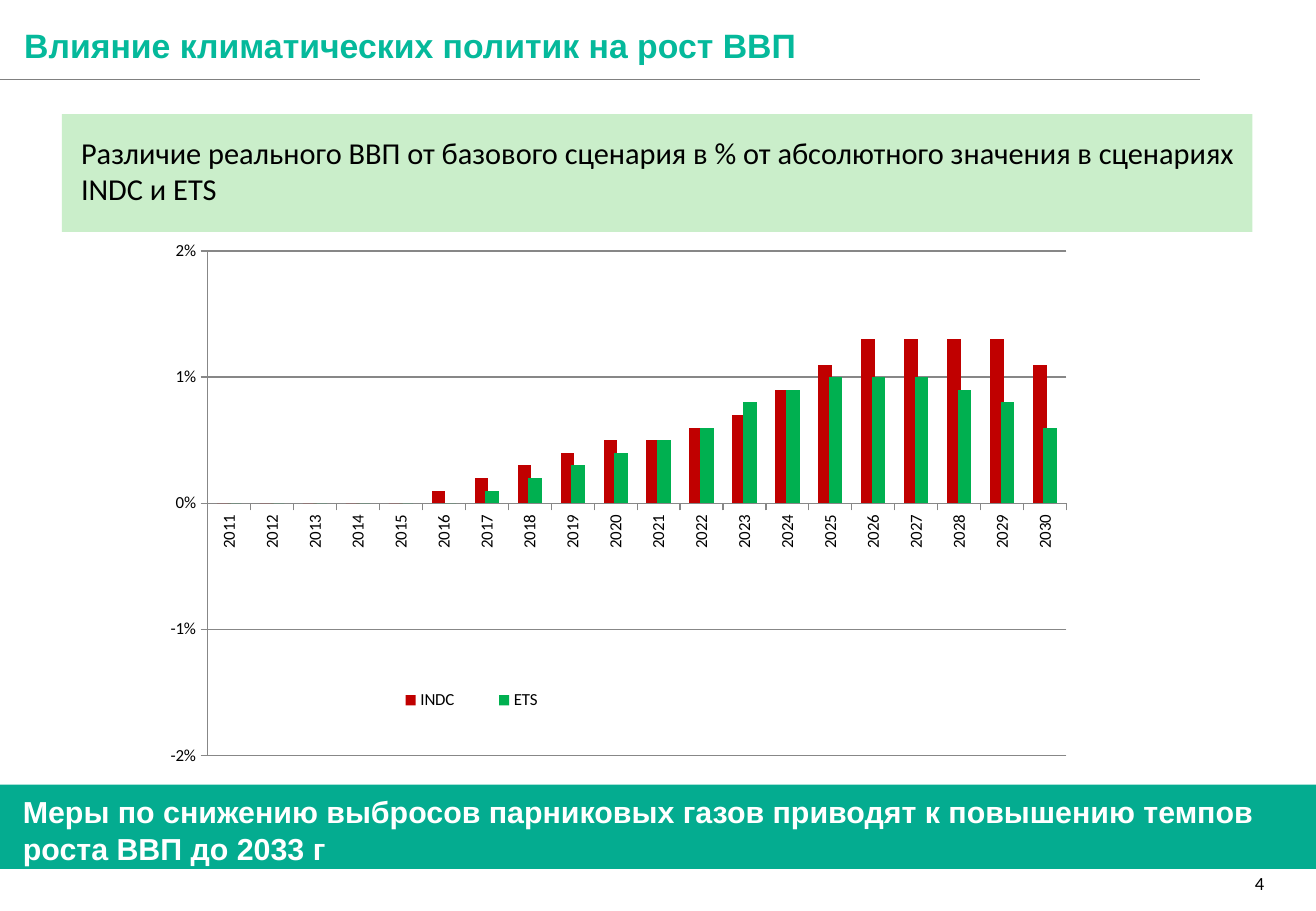
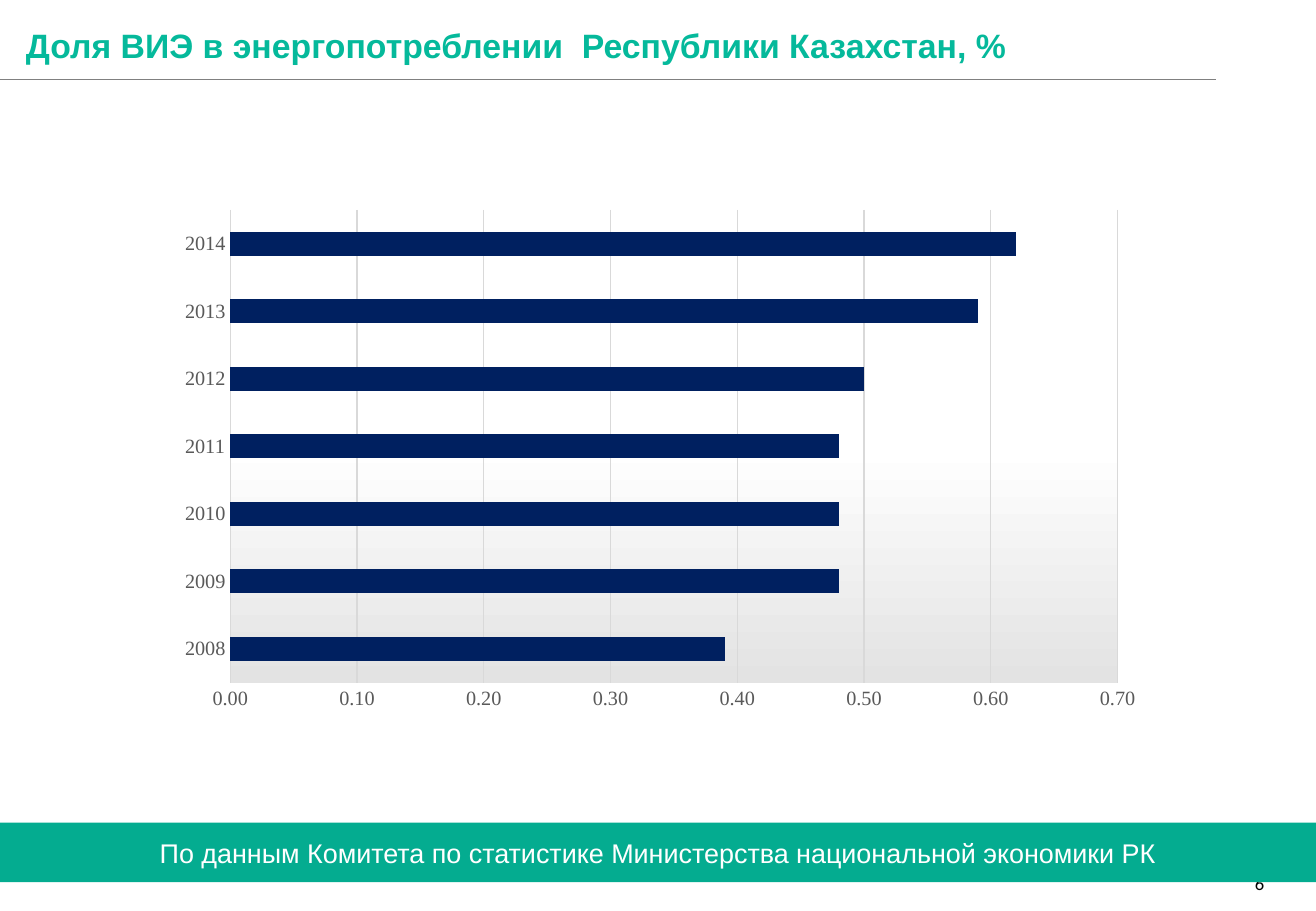
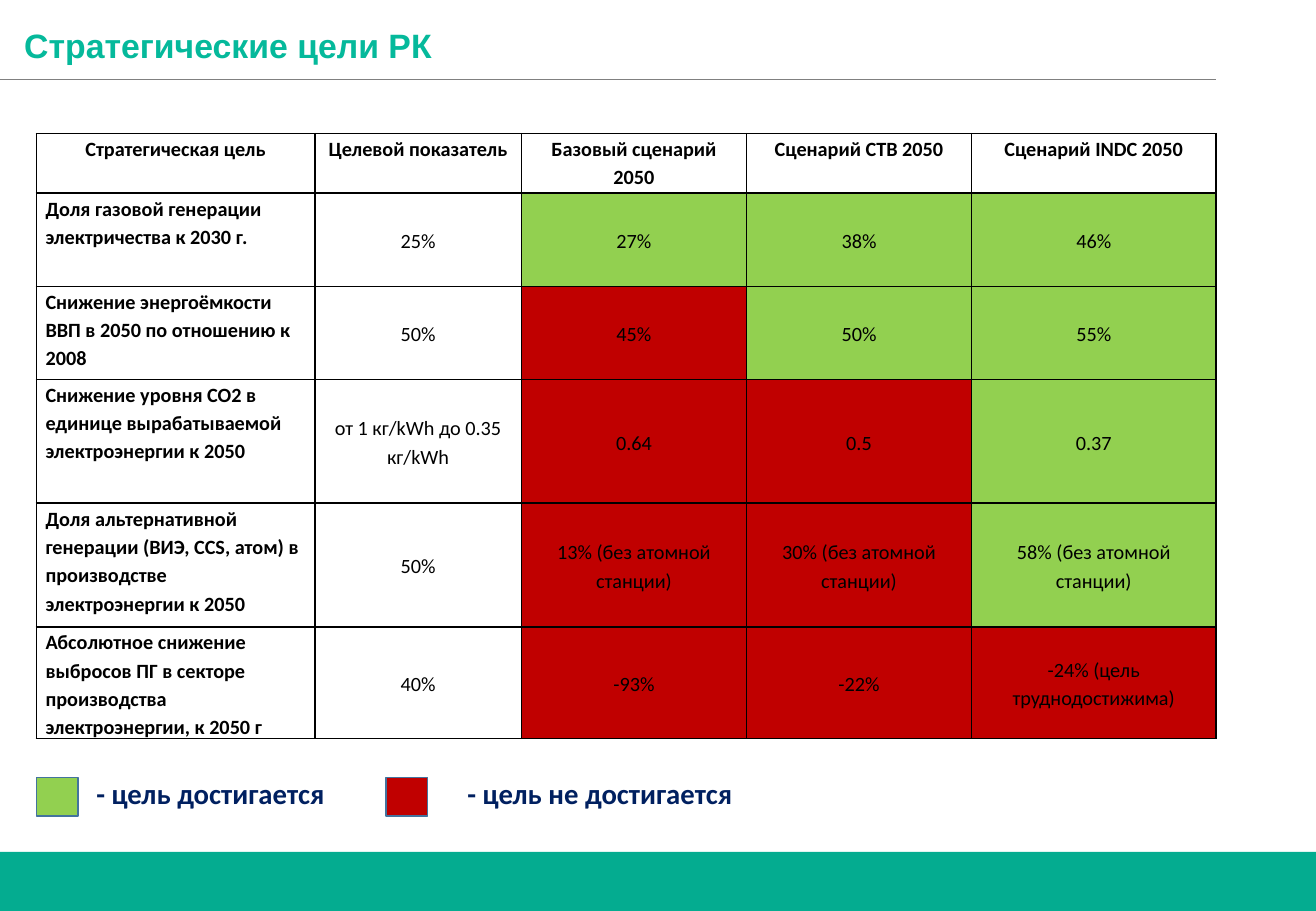
from dataclasses import dataclass

from lxml.etree import SubElement
from pptx import Presentation
from pptx.chart.chart import Chart
from pptx.chart.data import CategoryChartData
from pptx.dml.color import RGBColor
from pptx.enum.chart import XL_CHART_TYPE, XL_LEGEND_POSITION, XL_TICK_MARK
from pptx.enum.shapes import MSO_CONNECTOR, MSO_SHAPE
from pptx.enum.text import MSO_ANCHOR, MSO_AUTO_SIZE, PP_ALIGN
from pptx.oxml import parse_xml
from pptx.oxml.ns import nsdecls, qn
from pptx.presentation import Presentation as Deck
from pptx.shapes.autoshape import Shape
from pptx.slide import Slide
from pptx.table import _Cell as Cell
from pptx.text.text import Font, TextFrame
from pptx.util import Pt


@dataclass(frozen=True)
class Theme:
    title: str = "05B99B"
    band: str = "04AC90"
    rule: str = "808080"
    note: str = "CAEECA"
    white: str = "FFFFFF"
    black: str = "000000"
    navy: str = "002060"
    reached: str = "92D050"
    missed: str = "C00000"
    emissions: str = "00B050"
    swatch_line: str = "43739E"
    grid: str = "D9D9D9"
    axis_text: str = "595959"
    shade: str = "E3E3E3"
    heading_font: str = "Arial"
    body_font: str = "Calibri"
    chart_font: str = "Times New Roman"
    title_size: float = 20
    large_size: float = 18
    legend_size: float = 17
    source_size: float = 16
    table_size: float = 12
    number_size: float = 11
    small_size: float = 10


THEME = Theme()
SLIDE_WIDTH, SLIDE_HEIGHT = 780, 540


@dataclass(frozen=True)
class Box:
    left: float
    top: float
    width: float
    height: float

    def lengths(self) -> tuple[Pt, Pt, Pt, Pt]:
        return Pt(self.left), Pt(self.top), Pt(self.width), Pt(self.height)


@dataclass(frozen=True)
class Style:
    font: str
    size: float
    color: str
    bold: bool = False


@dataclass(frozen=True)
class Series:
    name: str
    values: tuple[float, ...]
    color: str


@dataclass(frozen=True)
class Result:
    text: str
    reached: bool


@dataclass(frozen=True)
class Goal:
    name: str
    target: str
    results: tuple[Result, Result, Result]


@dataclass(frozen=True)
class LegendItem:
    swatch_left: float
    text_left: float
    text: str
    color: str


TITLE = Style(THEME.heading_font, THEME.title_size, THEME.title, True)
NUMBER = Style(THEME.body_font, THEME.number_size, THEME.black)
NOTE = Style(THEME.body_font, THEME.large_size, THEME.black)
CONCLUSION = Style(THEME.heading_font, THEME.large_size, THEME.white, True)
SOURCE = Style(THEME.heading_font, THEME.source_size, THEME.white)
CELL = Style(THEME.body_font, THEME.table_size, THEME.black)
CELL_BOLD = Style(THEME.body_font, THEME.table_size, THEME.black, True)
LEGEND = Style(THEME.body_font, THEME.legend_size, THEME.navy, True)
CHART_TEXT = Style(THEME.body_font, THEME.small_size, THEME.black)
AXIS_TEXT = Style(THEME.chart_font, THEME.table_size, THEME.axis_text)

GROWTH = (
    Series("INDC", (0, 0, 0, 0, 0, 0.001, 0.002, 0.003, 0.004, 0.005,
                    0.005, 0.006, 0.007, 0.009, 0.011, 0.013, 0.013,
                    0.013, 0.013, 0.011), THEME.missed),
    Series("ETS", (0, 0, 0, 0, 0, 0, 0.001, 0.002, 0.003, 0.004,
                   0.005, 0.006, 0.008, 0.009, 0.01, 0.01, 0.01,
                   0.009, 0.008, 0.006), THEME.emissions),
)
RENEWABLES = (
    Series("Series 1", (0.39, 0.48, 0.48, 0.48, 0.5, 0.59, 0.62), THEME.navy),
)

HEADERS = ("Стратегическая цель", "Целевой показатель", "Базовый сценарий 2050",
           "Сценарий СТВ 2050", "Сценарий INDC 2050")
GOALS = (
    Goal("Доля газовой генерации электричества к 2030 г.", "25%",
         (Result("27%", True), Result("38%", True), Result("46%", True))),
    Goal("Снижение энергоёмкости ВВП в 2050 по отношению к 2008", "50%",
         (Result("45%", False), Result("50%", True), Result("55%", True))),
    Goal("Снижение уровня CO2 в единице вырабатываемой электроэнергии к 2050",
         "от 1 кг/kWh до 0.35 кг/kWh",
         (Result("0.64", False), Result("0.5", False), Result("0.37", True))),
    Goal("Доля альтернативной генерации (ВИЭ, CCS, атом) в производстве "
         "электроэнергии к 2050", "50%",
         (Result("13% (без атомной станции)", False),
          Result("30% (без атомной станции)", False),
          Result("58% (без атомной станции)", True))),
    Goal("Абсолютное снижение выбросов ПГ в секторе производства "
         "электроэнергии, к 2050 г", "40%",
         (Result("-93%", False), Result("-22%", False),
          Result("-24% (цель труднодостижима)", False))),
)
COLUMN_WIDTHS = (165, 122.5, 133.4, 133.4, 144.9)
ROW_HEIGHTS = (35.3, 55.2, 55.2, 73.4, 73.4, 64.5)
LEGEND_ITEMS = (
    LegendItem(21.6, 50, "- цель достигается", THEME.reached),
    LegendItem(229, 270, "- цель не достигается", THEME.missed),
)


# Text and shapes
def style_font(font: Font, style: Style) -> None:
    font.name = style.font
    font.size = Pt(style.size)
    font.bold = style.bold
    font.color.rgb = RGBColor.from_string(style.color)


def write(frame: TextFrame, lines: tuple[str, ...], style: Style,
          align: PP_ALIGN = PP_ALIGN.LEFT, spacing: float = 1.0) -> None:
    for index, line in enumerate(lines):
        paragraph = frame.add_paragraph() if index else frame.paragraphs[0]
        paragraph.alignment = align
        paragraph.line_spacing = spacing
        run = paragraph.add_run()
        run.text = line
        style_font(run.font, style)


def add_text(slide: Slide, box: Box, lines: tuple[str, ...], style: Style,
             wrap: bool = True, spacing: float = 1.0) -> TextFrame:
    frame = slide.shapes.add_textbox(*box.lengths()).text_frame
    frame.word_wrap = wrap
    write(frame, lines, style, spacing=spacing)
    return frame


def clear_margins(frame: TextFrame) -> None:
    frame.margin_left = frame.margin_right = Pt(0)
    frame.margin_top = frame.margin_bottom = Pt(0)


def add_rectangle(slide: Slide, box: Box, color: str, line: str = "") -> Shape:
    shape = slide.shapes.add_shape(MSO_SHAPE.RECTANGLE, *box.lengths())
    shape.shadow.inherit = False
    shape.fill.solid()
    shape.fill.fore_color.rgb = RGBColor.from_string(color)
    if line:
        shape.line.color.rgb = RGBColor.from_string(line)
        shape.line.width = Pt(1)
    else:
        shape.line.fill.background()
    return shape


# Parts shared by the slides
def add_base(presentation: Deck, title: str, rule_width: float = 721,
             title_left: float = 14.4, number: str = "") -> Slide:
    slide = presentation.slides.add_slide(presentation.slide_layouts[6])
    frame = add_text(slide, Box(title_left, 17.3, 720, 21.6), (title,), TITLE, spacing=0.9)
    clear_margins(frame)
    frame.vertical_anchor = MSO_ANCHOR.BOTTOM
    if number:
        clear_margins(add_text(slide, Box(743.8, 517, 17.3, 12.2), (number,), NUMBER, wrap=False))
    rule = slide.shapes.add_connector(
        MSO_CONNECTOR.STRAIGHT, Pt(0), Pt(47.2), Pt(rule_width), Pt(47.2))
    rule.line.color.rgb = RGBColor.from_string(THEME.rule)
    rule.line.width = Pt(0.5)
    SubElement(rule._element.spPr, qn("a:effectLst"))
    return slide


def add_band(slide: Slide, top: float, height: float = 35.3) -> Shape:
    return add_rectangle(slide, Box(0, top, SLIDE_WIDTH, height), THEME.band)


# Charts
def add_bars(slide: Slide, box: Box, kind: XL_CHART_TYPE, first_year: int,
             rows: tuple[Series, ...], gap: int, overlap: int, style: Style) -> Chart:
    data = CategoryChartData()
    data.categories = [str(first_year + step) for step in range(len(rows[0].values))]
    for row in rows:
        data.add_series(row.name, row.values)
    chart = slide.shapes.add_chart(kind, *box.lengths(), data).chart
    chart.has_title = False
    chart.has_legend = False
    style_font(chart.font, style)
    plot = chart.plots[0]
    plot.vary_by_categories = False
    plot.gap_width = gap
    plot.overlap = overlap
    for series, row in zip(plot.series, rows):
        series.invert_if_negative = False
        series.format.fill.solid()
        series.format.fill.fore_color.rgb = RGBColor.from_string(row.color)
    chart.value_axis.has_major_gridlines = True
    return chart


def set_layout(parent, index: int, box: Box, inner: bool = False) -> None:
    for old in parent.findall(qn("c:layout")):
        parent.remove(old)
    target = '<c:layoutTarget val="inner"/>' if inner else ""
    parent.insert(index, parse_xml(
        f'<c:layout {nsdecls("c")}><c:manualLayout>{target}'
        f'<c:xMode val="edge"/><c:yMode val="edge"/>'
        f'<c:x val="{box.left}"/><c:y val="{box.top}"/>'
        f'<c:w val="{box.width}"/><c:h val="{box.height}"/>'
        f'</c:manualLayout></c:layout>'))


def shape_properties(fill: str):
    return parse_xml(f'<c:spPr {nsdecls("c", "a")}>{fill}<a:ln><a:noFill/></a:ln></c:spPr>')


def fill_chart(chart: Chart) -> None:
    white = f'<a:solidFill><a:srgbClr val="{THEME.white}"/></a:solidFill>'
    chart._chartSpace.find(qn("c:chart")).addnext(shape_properties(white))
    stops = "".join(
        f'<a:gs pos="{percent * 1000}"><a:srgbClr val="{color}"/></a:gs>'
        for percent, color in ((0, THEME.white), (50, THEME.white), (100, THEME.shade)))
    gradient = (f'<a:gradFill><a:gsLst>{stops}</a:gsLst>'
                f'<a:lin ang="5400000" scaled="0"/></a:gradFill>')
    plot_area = chart._chartSpace.find(f'{qn("c:chart")}/{qn("c:plotArea")}')
    plot_area.append(shape_properties(gradient))


# Table cells
def fill_cell(cell: Cell, text: str, style: Style, align: PP_ALIGN,
              anchor: MSO_ANCHOR, color: str = "") -> None:
    cell.margin_left = cell.margin_right = Pt(5.4)
    cell.margin_top = cell.margin_bottom = Pt(0)
    cell.vertical_anchor = anchor
    write(cell.text_frame, (text,), style, align, 1.15)
    if color:
        cell.fill.solid()
        cell.fill.fore_color.rgb = RGBColor.from_string(color)
    else:
        cell.fill.background()
    properties = cell._tc.get_or_add_tcPr()
    for index, side in enumerate(("lnL", "lnR", "lnT", "lnB")):
        properties.insert(index, parse_xml(
            f'<a:{side} {nsdecls("a")} w="12700"><a:solidFill>'
            f'<a:srgbClr val="{THEME.black}"/></a:solidFill></a:{side}>'))


# Slides
def build_growth(presentation: Deck) -> None:
    slide = add_base(presentation, "Влияние климатических политик на рост ВВП",
                     rule_width=711.4, number="4")
    add_rectangle(slide, Box(36.7, 67.7, 705.6, 69.8), THEME.note)
    add_text(slide, Box(41, 75.8, 701.3, 69.1),
             ("Различие реального ВВП от базового сценария в % от абсолютного "
              "значения в сценариях INDC и ETS",), NOTE)
    add_band(slide, 465.1, 50)
    add_text(slide, Box(6.5, 466.8, 765.4, 51),
             ("Меры по снижению выбросов парниковых газов приводят к повышению темпов",
              "роста ВВП до 2033 г"), CONCLUSION)

    chart = add_bars(slide, Box(92.2, 137.8, 594.7, 336.2), XL_CHART_TYPE.COLUMN_CLUSTERED,
                     2011, GROWTH, 136, 23, CHART_TEXT)
    values, years = chart.value_axis, chart.category_axis
    values.minimum_scale, values.maximum_scale, values.major_unit = -0.02, 0.02, 0.01
    values.tick_labels.number_format = "0%"
    values.tick_labels.number_format_is_linked = False
    values.major_tick_mark = years.major_tick_mark = XL_TICK_MARK.OUTSIDE
    style_font(years.tick_labels.font, CHART_TEXT)
    label_body = years._element.find(f'{qn("c:txPr")}/{qn("a:bodyPr")}')
    label_body.set("rot", "-5400000")
    label_body.set("vert", "horz")
    chart.has_legend = True
    chart.legend.position = XL_LEGEND_POSITION.RIGHT
    chart.legend.include_in_layout = False
    set_layout(chart.legend._element, 1, Box(0.21, 0.8, 0.21, 0.05))
    plot_area = chart._chartSpace.find(f'{qn("c:chart")}/{qn("c:plotArea")}')
    set_layout(plot_area, 0, Box(0.052, 0.033, 0.856, 0.889), inner=True)


def build_renewables(presentation: Deck) -> None:
    slide = add_base(presentation, "Доля ВИЭ в энергопотреблении  Республики Казахстан, %",
                     title_left=15.3, number="6")
    frame = add_band(slide, 487.6).text_frame
    frame.word_wrap = False
    frame.vertical_anchor = MSO_ANCHOR.MIDDLE
    write(frame, ("По данным Комитета по статистике Министерства национальной экономики РК",),
          SOURCE, PP_ALIGN.CENTER)

    chart = add_bars(slide, Box(97.9, 118.3, 586.8, 308.2), XL_CHART_TYPE.BAR_CLUSTERED,
                     2008, RENEWABLES, 182, 0, AXIS_TEXT)
    values, years = chart.value_axis, chart.category_axis
    values.tick_labels.number_format = "0.00;[Red]0.00"
    values.tick_labels.number_format_is_linked = False
    values.format.line.fill.background()
    for axis in (values, years):
        axis.major_tick_mark = XL_TICK_MARK.NONE
        style_font(axis.tick_labels.font, AXIS_TEXT)
    for line in (values.major_gridlines.format.line, years.format.line):
        line.color.rgb = RGBColor.from_string(THEME.grid)
        line.width = Pt(0.75)
    fill_chart(chart)


def build_goals(presentation: Deck) -> None:
    slide = add_base(presentation, "Стратегические цели РК")
    add_band(slide, 504.9)

    box = Box(21.6, 79.2, sum(COLUMN_WIDTHS), sum(ROW_HEIGHTS))
    table = slide.shapes.add_table(
        len(ROW_HEIGHTS), len(COLUMN_WIDTHS), *box.lengths()).table
    table.first_row = table.horz_banding = False
    for column, width in zip(table.columns, COLUMN_WIDTHS):
        column.width = Pt(width)
    for row, height in zip(table.rows, ROW_HEIGHTS):
        row.height = Pt(height)
    for column, header in enumerate(HEADERS):
        fill_cell(table.cell(0, column), header, CELL_BOLD, PP_ALIGN.CENTER, MSO_ANCHOR.TOP)
    for row, goal in enumerate(GOALS, 1):
        fill_cell(table.cell(row, 0), goal.name, CELL_BOLD, PP_ALIGN.LEFT, MSO_ANCHOR.TOP)
        fill_cell(table.cell(row, 1), goal.target, CELL, PP_ALIGN.CENTER, MSO_ANCHOR.MIDDLE)
        for column, result in enumerate(goal.results, 2):
            color = THEME.reached if result.reached else THEME.missed
            fill_cell(table.cell(row, column), result.text, CELL,
                      PP_ALIGN.CENTER, MSO_ANCHOR.MIDDLE, color)

    for item in LEGEND_ITEMS:
        add_rectangle(slide, Box(item.swatch_left, 460.8, 24.5, 23),
                      item.color, THEME.swatch_line)
        frame = add_text(slide, Box(item.text_left, 456.5, 200, 28), (item.text,), LEGEND)
        frame.auto_size = MSO_AUTO_SIZE.SHAPE_TO_FIT_TEXT


def main() -> None:
    presentation = Presentation()
    presentation.slide_width = Pt(SLIDE_WIDTH)
    presentation.slide_height = Pt(SLIDE_HEIGHT)
    build_growth(presentation)
    build_renewables(presentation)
    build_goals(presentation)
    presentation.save("out.pptx")


if __name__ == "__main__":
    main()
